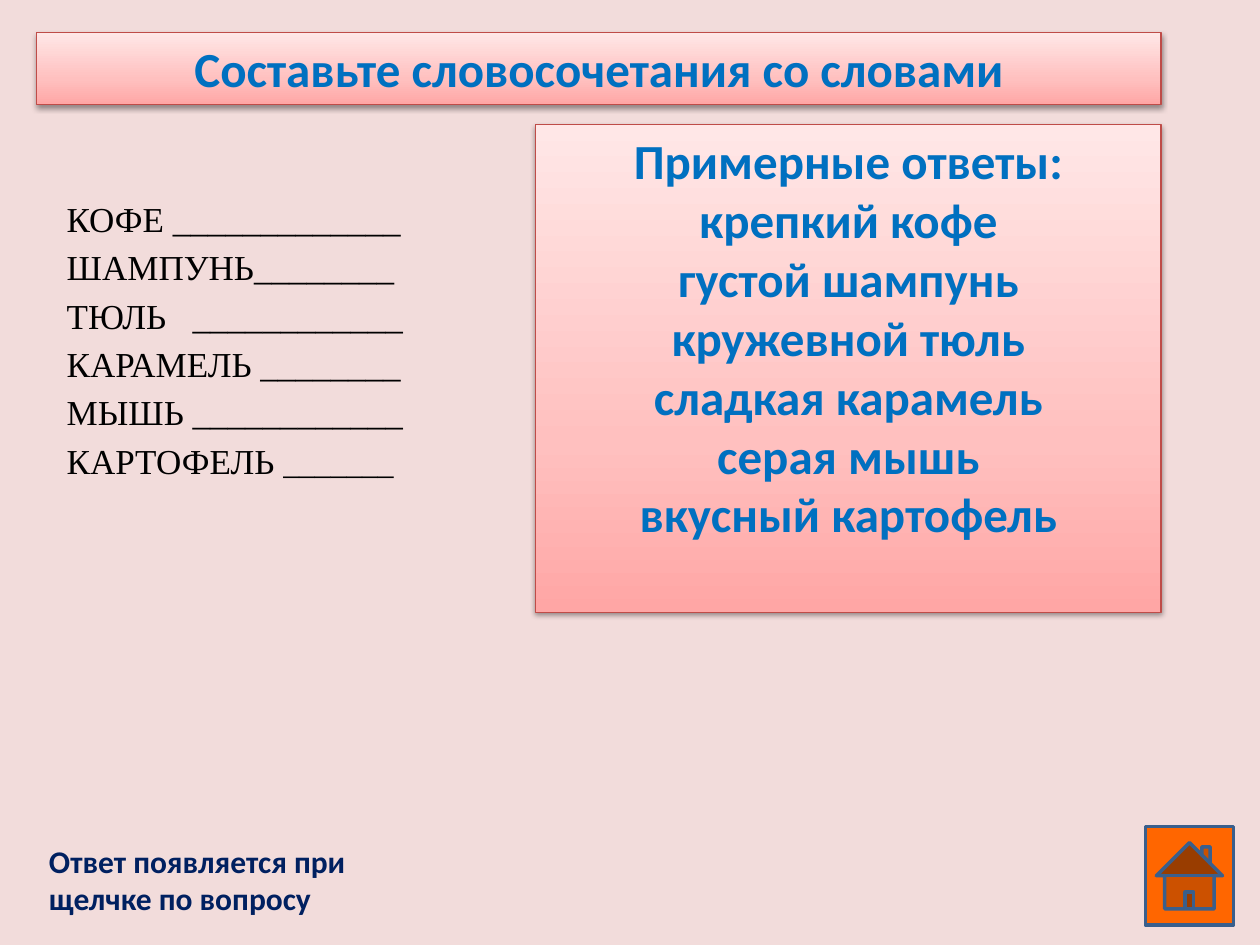
from lxml.etree import SubElement
from pptx import Presentation
from pptx.dml.color import RGBColor
from pptx.enum.shapes import MSO_SHAPE
from pptx.enum.text import MSO_ANCHOR, PP_ALIGN
from pptx.oxml import parse_xml
from pptx.oxml.ns import nsdecls, qn
from pptx.util import Pt

TITLE = ["Составьте словосочетания со словами"]
ANSWERS = [
    "Примерные ответы:",
    "крепкий кофе",
    "густой шампунь",
    "кружевной тюль",
    "сладкая карамель",
    "серая мышь",
    "вкусный картофель",
]
HINT = ["Ответ появляется при щелчке по вопросу"]
WORDS = [
    "КОФЕ _____________",
    "ШАМПУНЬ________",
    "ТЮЛЬ\t____________",
    "КАРАМЕЛЬ ________",
    "МЫШЬ ____________",
    "КАРТОФЕЛЬ ",
]
TAIL = "_______"

THEME = {
    "back": "F2DCDB", "blue": "0070C0", "navy": "002060", "black": "000000",
    "edge": "BF4C48", "home": "FF6600", "rim": "3A5F8C",
    "fade": [(0, "FFA6A5"), (35, "FFC0BF"), (100, "FFE7E7")],
    "sans": "Calibri", "serif": "Times New Roman",
    "head": 28, "word": 20, "note": 18,
}
LEFT, RIGHT, TAB = 20.9, 663.5, 72


def color(name):
    return RGBColor.from_string(THEME[name])


def write(shape, lines, size="head", font="sans", ink="blue", bold=True,
          align=PP_ALIGN.LEFT, space=None, tab=None):
    frame = shape.text_frame
    frame.word_wrap = True
    frame.vertical_anchor = MSO_ANCHOR.TOP
    for i, line in enumerate(lines):
        para = frame.paragraphs[0] if i == 0 else frame.add_paragraph()
        para.alignment = align
        if space:
            para.line_spacing = space
        if tab:
            stops = SubElement(para._p.get_or_add_pPr(), qn("a:tabLst"))
            SubElement(stops, qn("a:tab"), pos=str(Pt(tab)), algn="l")
        add_run(para, line, size, font, ink, bold)
    return frame


def add_run(para, line, size, font, ink, bold):
    run = para.add_run()
    run.text = line
    run.font.name = THEME[font]
    run.font.size = Pt(THEME[size])
    run.font.bold = bold
    run.font.color.rgb = color(ink)


def add_box(slide, kind, place, edge, width):
    shape = slide.shapes.add_shape(kind, *map(Pt, place))
    shape.shadow.inherit = False
    shape.line.color.rgb = color(edge)
    shape.line.width = Pt(width)
    return shape


def add_panel(slide, place, lines):
    shape = add_box(slide, MSO_SHAPE.RECTANGLE, place, "edge", 0.75)
    shape.fill.gradient()
    props = shape._element.spPr
    stops = "".join(
        f'<a:gs pos="{pos * 1000}"><a:srgbClr val="{tint}"/></a:gs>'
        for pos, tint in THEME["fade"])
    props.replace(props.find(qn("a:gradFill")), parse_xml(
        f'<a:gradFill {nsdecls("a")} rotWithShape="1"><a:gsLst>{stops}</a:gsLst>'
        '<a:lin ang="16200000" scaled="1"/></a:gradFill>'))
    props.replace(props.find(qn("a:effectLst")), parse_xml(
        f'<a:effectLst {nsdecls("a")}><a:outerShdw blurRad="{Pt(3.1)}" '
        f'dist="{Pt(1.6)}" dir="5400000" rotWithShape="0">'
        '<a:srgbClr val="000000"><a:alpha val="38000"/></a:srgbClr>'
        '</a:outerShdw></a:effectLst>'))
    write(shape, lines, align=PP_ALIGN.CENTER)


def add_text(slide, place, lines, **style):
    return write(slide.shapes.add_textbox(*map(Pt, place)), lines, **style)


def main():
    """Build the word-pairing exercise slide."""
    deck = Presentation()
    deck.slide_width, deck.slide_height = Pt(720), Pt(540)
    slide = deck.slides.add_slide(deck.slide_layouts[6])
    slide.background.fill.solid()
    slide.background.fill.fore_color.rgb = color("back")

    add_panel(slide, (LEFT, 18.7, RIGHT - LEFT, 41), TITLE)
    add_panel(slide, (306, 71.3, RIGHT - 306, 278.6), ANSWERS)
    add_text(slide, (LEFT, 477.4, 214.6, 51), HINT, size="note", ink="navy")
    home = add_box(slide, MSO_SHAPE.ACTION_BUTTON_HOME,
                   (654.5, 472.3, 50.4, 56.2), "rim", 2)
    home.fill.solid()
    home.fill.fore_color.rgb = color("home")
    frame = add_text(slide, (31, 105.8, 231.8, 172), WORDS, size="word",
                     font="serif", ink="black", bold=False, space=1.15, tab=TAB)
    add_run(frame.paragraphs[-1], TAIL, "note", "serif", "black", False)
    deck.save("out.pptx")


if __name__ == "__main__":
    main()
